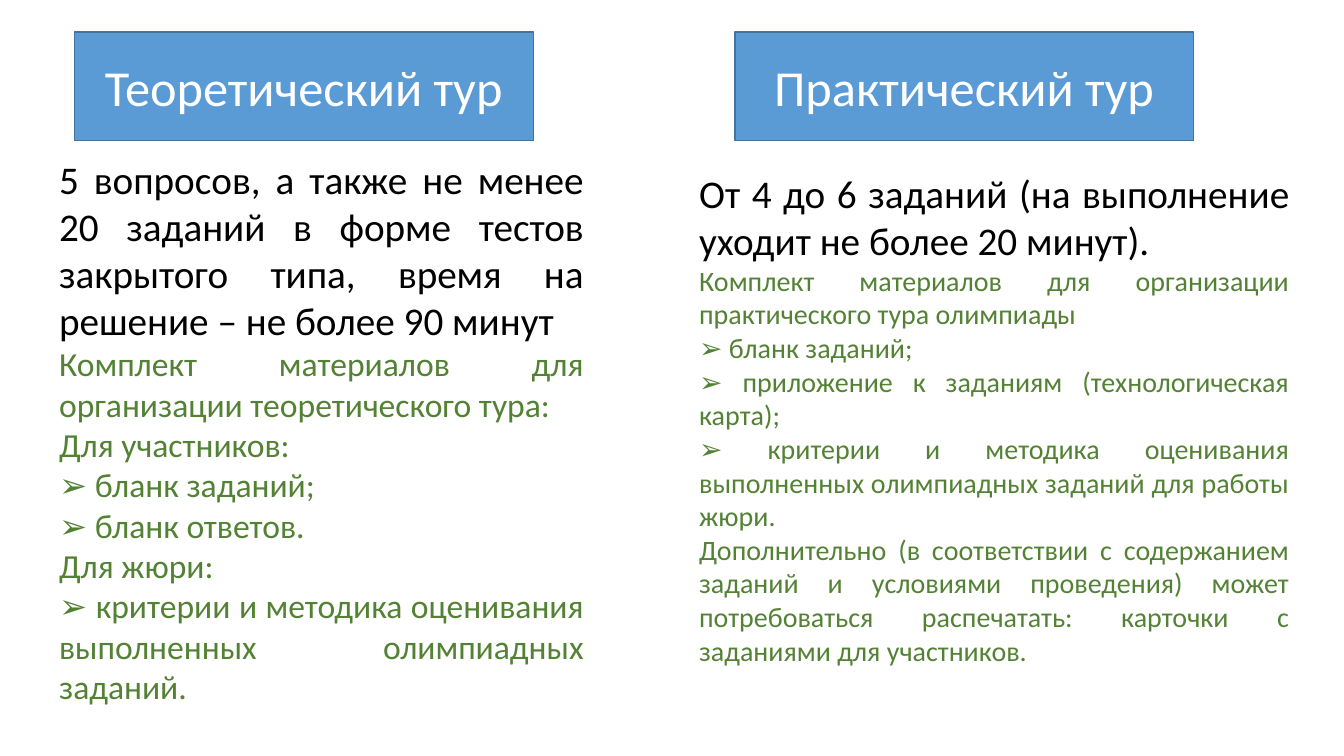
from pptx import Presentation
from pptx.dml.color import RGBColor
from pptx.enum.shapes import MSO_SHAPE
from pptx.enum.text import MSO_ANCHOR, MSO_AUTO_SIZE, PP_ALIGN
from pptx.util import Cm, Pt

RECT = MSO_SHAPE.RECTANGLE
MIDDLE = MSO_ANCHOR.MIDDLE
GROW = MSO_AUTO_SIZE.SHAPE_TO_FIT_TEXT
CENTER, JUSTIFY = PP_ALIGN.CENTER, PP_ALIGN.JUSTIFY

FONT = "Calibri"
COLORS = {
    "header": "5B9BD5",
    "border": "43739E",
    "title": "FFFFFF",
    "lead": "000000",
    "detail": "548235",
}
TITLE_SIZE, LEAD_SIZE = 36, 28
HEADER_TOP, HEADER_W, HEADER_H = 0.81, 11.56, 2.74

ROUNDS = [
    {
        "title": "Теоретический тур",
        "header_left": 1.88,
        "body": (1.24, 3.78, 13.72, 14.27),
        "detail_size": 24,
        "lead": "5 вопросов, а также не менее 20 заданий в форме тестов "
                "закрытого типа, время на решение – не более 90 минут",
        "details": [
            "Комплект материалов для организации теоретического тура:",
            "Для участников:",
            "➢ бланк заданий;",
            "➢ бланк ответов.",
            "Для жюри:",
            "➢ критерии и методика оценивания выполненных олимпиадных заданий.",
        ],
    },
    {
        "title": "Практический тур",
        "header_left": 18.52,
        "body": (17.37, 4.14, 15.37, 12.9),
        "detail_size": 20,
        "lead": "От 4 до 6 заданий (на выполнение уходит не более 20 минут).",
        "details": [
            "Комплект материалов для организации практического тура олимпиады",
            "➢ бланк заданий;",
            "➢ приложение к заданиям (технологическая карта);",
            "➢ критерии и методика оценивания выполненных олимпиадных "
            "заданий для работы жюри.",
            "Дополнительно (в соответствии с содержанием заданий и условиями "
            "проведения) может потребоваться распечатать: карточки с "
            "заданиями для участников.",
        ],
    },
]


def rgb(name):
    return RGBColor.from_string(COLORS[name])


def write(p, text, size, color, align):
    p.alignment = align
    r = p.add_run()
    r.text = text
    r.font.name = FONT
    r.font.size = Pt(size)
    r.font.color.rgb = rgb(color)


def add_header(s, item):
    sp = s.shapes.add_shape(RECT, Cm(item["header_left"]), Cm(HEADER_TOP),
                            Cm(HEADER_W), Cm(HEADER_H))
    sp.shadow.inherit = False
    sp.fill.solid()
    sp.fill.fore_color.rgb = rgb("header")
    sp.line.color.rgb = rgb("border")
    sp.line.width = Pt(1)
    tf = sp.text_frame
    tf.vertical_anchor = MIDDLE
    write(tf.paragraphs[0], item["title"], TITLE_SIZE, "title", CENTER)


def add_body(s, item):
    tf = s.shapes.add_textbox(*map(Cm, item["body"])).text_frame
    tf.word_wrap = True
    tf.auto_size = GROW
    write(tf.paragraphs[0], item["lead"], LEAD_SIZE, "lead", JUSTIFY)
    for text in item["details"]:
        write(tf.add_paragraph(), text, item["detail_size"], "detail", JUSTIFY)


def main():
    prs = Presentation()
    prs.slide_width, prs.slide_height = Cm(33.87), Cm(19.05)
    s = prs.slides.add_slide(prs.slide_layouts[6])
    for item in ROUNDS:
        add_header(s, item)
        add_body(s, item)
    prs.save("out.pptx")


if __name__ == "__main__":
    main()
